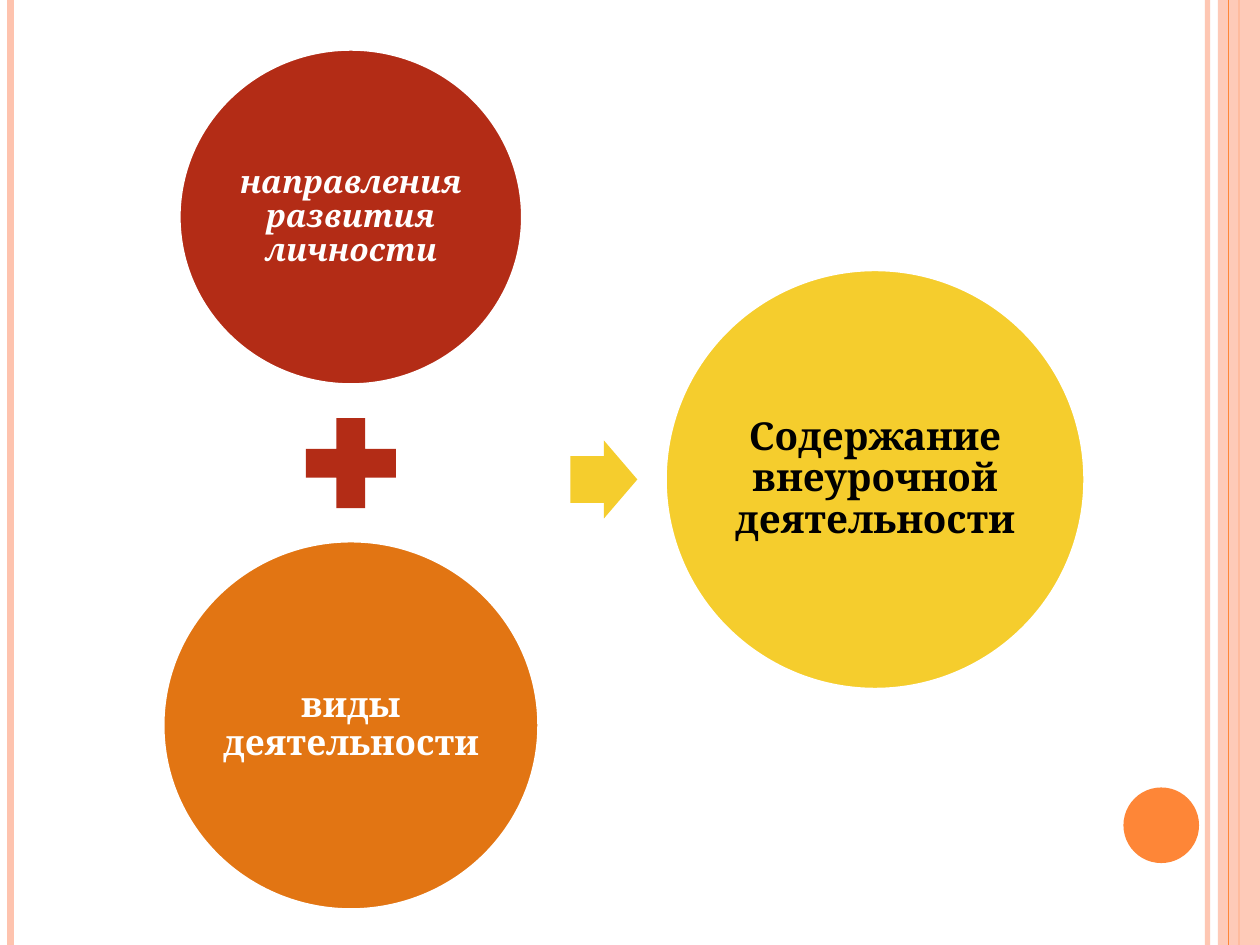
import pptx
import pptx.dml.color
import pptx.enum.shapes
import pptx.enum.text
import pptx.oxml.ns
import pptx.util
from lxml import etree

Pt = pptx.util.Pt
SHAPES = pptx.enum.shapes.MSO_SHAPE
WIDTH, HEIGHT = 720, 540

PEACH, ORANGE = "FEC3AE", "FE8637"
RED, AMBER, YELLOW = "B32C16", "E27513", "F5CD2D"
WHITE, BLACK = "FFFFFF", "000000"


def color(hex_string):
    return pptx.dml.color.RGBColor.from_string(hex_string)


def apply_format(target, values):
    for name, value in values.items():
        setattr(target, name, value)


class SlideBuilder:
    FONT = "Cambria"
    FRAME = {
        "word_wrap": True,
        "vertical_anchor": pptx.enum.text.MSO_ANCHOR.MIDDLE,
        "margin_left": Pt(2),
        "margin_right": Pt(2),
        "margin_top": Pt(2),
        "margin_bottom": Pt(2),
    }
    PARAGRAPH = {"alignment": pptx.enum.text.PP_ALIGN.CENTER, "line_spacing": 0.9}

    def __init__(self, slide):
        self.slide = slide

    def set_opacity(self, element, percent):
        """Make the solid colour inside the element partly transparent."""
        rgb = next(element.iter(pptx.oxml.ns.qn("a:srgbClr")))
        alpha = etree.SubElement(rgb, pptx.oxml.ns.qn("a:alpha"))
        alpha.set("val", str(percent * 1000))

    def vertical_line(self, x, line_color, width, opacity=100):
        line = self.slide.shapes.add_connector(
            pptx.enum.shapes.MSO_CONNECTOR.STRAIGHT, Pt(x), Pt(0), Pt(x), Pt(HEIGHT))
        line.line.color.rgb = color(line_color)
        line.line.width = Pt(width)
        properties = line._element.spPr
        if opacity < 100:
            self.set_opacity(properties, opacity)
        etree.SubElement(properties, pptx.oxml.ns.qn("a:effectLst"))

    def shape(self, kind, left, top, width, height, fill, opacity=100):
        shape = self.slide.shapes.add_shape(kind, Pt(left), Pt(top), Pt(width), Pt(height))
        shape.shadow.inherit = False
        shape.fill.solid()
        shape.fill.fore_color.rgb = color(fill)
        shape.line.fill.background()
        if opacity < 100:
            self.set_opacity(shape._element.spPr, opacity)
        return shape

    def labelled_circle(self, center_x, center_y, width, height, fill, text,
                        text_color, size, italic=False):
        circle = self.shape(SHAPES.OVAL, center_x - width / 2, center_y - height / 2,
                            width, height, fill)
        circle.line.color.rgb = color(WHITE)
        circle.line.width = Pt(2)
        apply_format(circle.text_frame, self.FRAME)
        paragraph = circle.text_frame.paragraphs[0]
        apply_format(paragraph, self.PARAGRAPH)
        run = paragraph.add_run()
        run.text = text
        apply_format(run.font, {"name": self.FONT, "size": Pt(size),
                                "bold": True, "italic": italic})
        run.font.color.rgb = color(text_color)


def add_frame(builder):
    builder.vertical_line(690, PEACH, 3, opacity=93)
    builder.vertical_line(6, PEACH, 4.5)
    builder.vertical_line(708, ORANGE, 1.5)
    builder.shape(SHAPES.RECTANGLE, 696, 0, 24, HEIGHT, PEACH, opacity=87)
    builder.vertical_line(702, ORANGE, 0.75)
    builder.shape(SHAPES.OVAL, 642, 450, 43.2, 43.2, ORANGE)


def add_equation(builder):
    left_center, result_center = 200.5, 274
    builder.labelled_circle(left_center, 124, 196.5, 192, RED,
                            "направления развития личности", WHITE, 18, italic=True)
    builder.shape(SHAPES.MATH_PLUS, left_center - 35, 229.7, 70, 70, RED)
    builder.labelled_circle(left_center, 414.5, 215, 211, AMBER,
                            "виды деятельности", WHITE, 20)
    arrow = builder.shape(SHAPES.RIGHT_ARROW, 326, result_center - 22.3, 38.2, 44.6, YELLOW)
    arrow.adjustments[0] = 0.6
    arrow.adjustments[1] = 0.5
    builder.labelled_circle(500, result_center, 240, 240, YELLOW,
                            "Содержание внеурочной деятельности", BLACK, 22)


def main():
    presentation = pptx.Presentation()
    presentation.slide_width = Pt(WIDTH)
    presentation.slide_height = Pt(HEIGHT)
    slide = presentation.slides.add_slide(presentation.slide_layouts[6])
    builder = SlideBuilder(slide)
    add_frame(builder)
    add_equation(builder)
    presentation.save("out.pptx")


if __name__ == "__main__":
    main()
